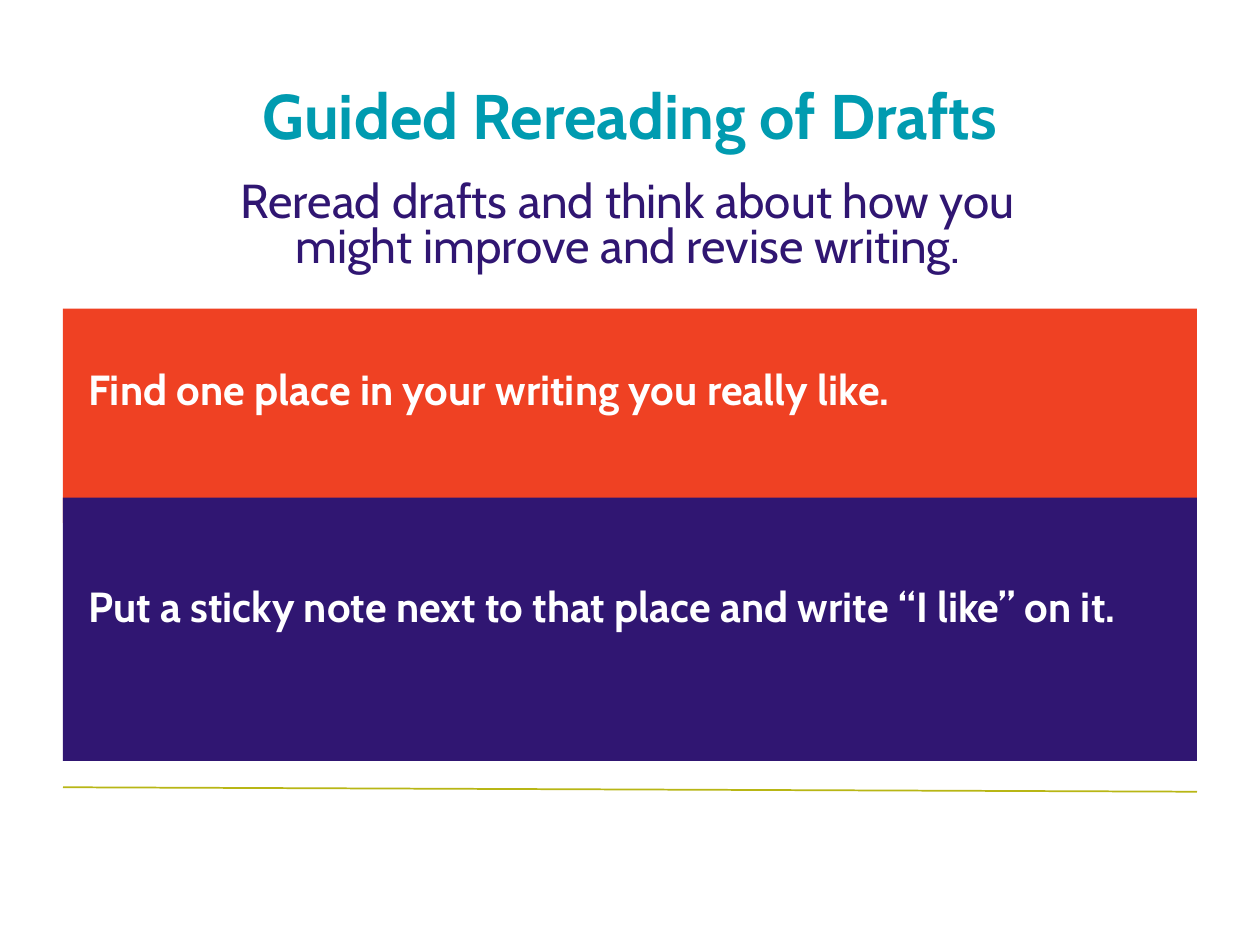
from dataclasses import dataclass

from lxml.etree import SubElement
from pptx import Presentation
from pptx.dml.color import RGBColor
from pptx.enum.shapes import MSO_CONNECTOR as Connector, MSO_SHAPE as Shape
from pptx.enum.text import MSO_ANCHOR as Anchor, PP_ALIGN as Align
from pptx.oxml.ns import qn
from pptx.slide import Slide
from pptx.text.text import TextFrame
from pptx.util import Cm, Pt

COLORS = {
    "teal": "009BB0",
    "indigo": "301672",
    "orange": "EF4123",
    "olive": "B8B615",
    "white": "FFFFFF",
}
LEFT, WIDTH = 1.27, 22.86


@dataclass
class TextStyle:
    size: float
    color: str
    bold: bool = True
    align: Align = Align.LEFT
    spacing: float = 1.0
    anchor: Anchor = Anchor.MIDDLE
    insets: tuple[float, float, float, float] = (0.25, 0.13, 0.25, 0.13)


@dataclass
class Step:
    text: str
    top: float
    height: float
    fill: str
    spacing: float


def color(name: str) -> RGBColor:
    return RGBColor.from_string(COLORS[name])


def write(frame: TextFrame, text: str, style: TextStyle) -> None:
    left, top, right, bottom = map(Cm, style.insets)
    frame_format = {
        "word_wrap": True,
        "vertical_anchor": style.anchor,
        "margin_left": left,
        "margin_top": top,
        "margin_right": right,
        "margin_bottom": bottom,
    }
    for name, value in frame_format.items():
        setattr(frame, name, value)
    paragraph = frame.paragraphs[0]
    paragraph.text = text
    paragraph.alignment = style.align
    paragraph.line_spacing = style.spacing
    font_format = {"name": "Cabin", "size": Pt(style.size), "bold": style.bold}
    for run in paragraph.runs:
        for name, value in font_format.items():
            setattr(run.font, name, value)
        run.font.color.rgb = color(style.color)


def add_step(slide: Slide, step: Step) -> None:
    band = slide.shapes.add_shape(
        Shape.RECTANGLE, Cm(LEFT), Cm(step.top), Cm(WIDTH), Cm(step.height)
    )
    band.shadow.inherit = False
    band.fill.solid()
    band.fill.fore_color.rgb = color(step.fill)
    band.line.fill.background()
    style = TextStyle(
        24, "white", spacing=step.spacing, insets=(0.51, 0.51, 0.51, 1.45)
    )
    write(band.text_frame, step.text, style)


def add_rule(slide: Slide) -> None:
    rule = slide.shapes.add_connector(
        Connector.STRAIGHT, Cm(LEFT), Cm(15.87), Cm(LEFT + WIDTH), Cm(15.96)
    )
    rule.line.color.rgb = color("olive")
    rule.line.width = Pt(1)
    SubElement(rule.element.spPr, qn("a:effectLst"))


def main() -> None:
    deck = Presentation()
    deck.slide_width, deck.slide_height = Cm(25.4), Cm(19.05)
    slide = deck.slides.add_slide(deck.slide_layouts[5])
    add_rule(slide)

    title = slide.shapes.title
    title_place = {
        "left": Cm(LEFT), "top": Cm(0.86), "width": Cm(WIDTH), "height": Cm(2.9)
    }
    for name, value in title_place.items():
        setattr(title, name, value)
    write(
        title.text_frame,
        "Guided Rereading of Drafts",
        TextStyle(36, "teal", align=Align.CENTER),
    )

    prompt = slide.shapes.add_textbox(Cm(1.88), Cm(3.53), Cm(21.56), Cm(2.18))
    write(
        prompt.text_frame,
        "Reread drafts and think about how you\vmight improve and revise writing.",
        TextStyle(27.2, "indigo", False, Align.CENTER, 0.8, Anchor.TOP),
    )

    steps = [
        Step("Find one place in your writing you really like.",
             6.22, 4.32, "orange", 0.9),
        Step("Put a sticky note next to that place and write “I like” on it.",
             10.03, 5.31, "indigo", 1.0),
    ]
    for step in steps:
        add_step(slide, step)
    deck.save("out.pptx")


if __name__ == "__main__":
    main()
